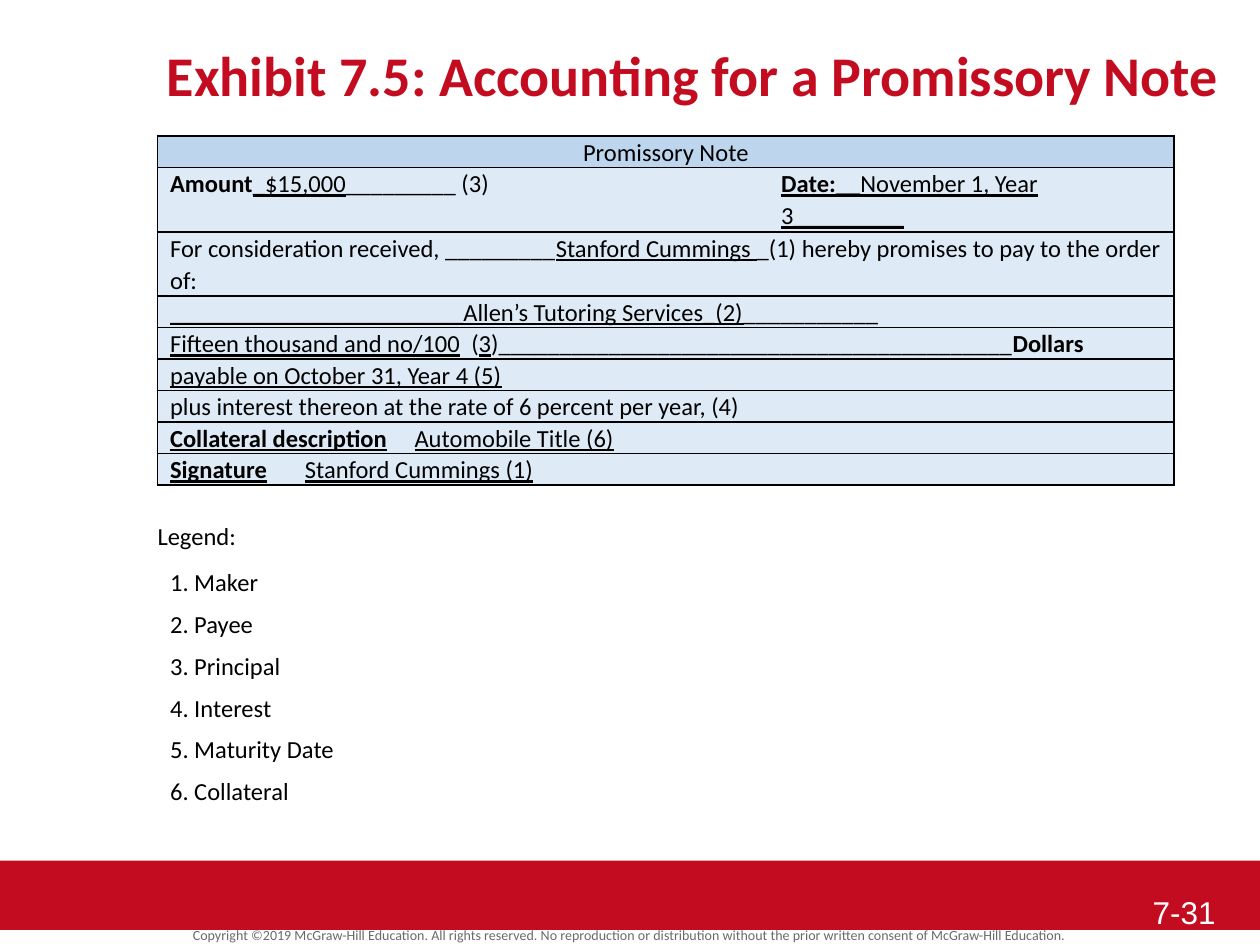
from lxml import etree
from pptx import Presentation
from pptx.dml.color import RGBColor
from pptx.enum import shapes, text
from pptx.oxml.ns import qn
from pptx.util import Inches, Pt

RED = RGBColor(0xC3, 0x0C, 0x20)
BLACK = RGBColor(0, 0, 0)
WHITE = RGBColor(0xFF, 0xFF, 0xFF)
GRAY = RGBColor(0x6A, 0x6A, 0x6A)
HEADER_BLUE = RGBColor(0xBD, 0xD6, 0xEE)
ROW_BLUE = RGBColor(0xDE, 0xEA, 0xF6)


def write(paragraph, wording, size=14, color=BLACK, name="Calibri", bold=False,
          underline=False, align=text.PP_ALIGN.LEFT, spacing=1.07):
    paragraph.alignment = align
    paragraph.line_spacing = spacing
    run = paragraph.add_run()
    run.text = wording
    font = run.font
    font.size, font.name, font.bold, font.underline = Pt(size), name, bold, underline
    font.color.rgb = color


def draw_borders(cell, edges):
    properties = cell._tc.get_or_add_tcPr()
    for edge in "LRTB":
        line = etree.SubElement(properties, qn(f"a:ln{edge}"), w=str(Pt(1)))
        if edge in edges:
            fill = etree.SubElement(line, qn("a:solidFill"))
            etree.SubElement(fill, qn("a:srgbClr"), val=str(BLACK))
        else:
            etree.SubElement(line, qn("a:noFill"))


presentation = Presentation()
presentation.slide_width, presentation.slide_height = Inches(10), Inches(7.5)
slide = presentation.slides.add_slide(presentation.slide_layouts[1])

# Footer band and copyright line
band = slide.shapes.add_shape(shapes.MSO_SHAPE.RECTANGLE, Inches(0), Inches(6.83),
                              Inches(10), Inches(0.55))
band.shadow.inherit = False
band.fill.solid()
band.fill.fore_color.rgb = RED
band.line.fill.background()

copyright_box = slide.shapes.add_textbox(Inches(0), Inches(7.34), Inches(10), Inches(0.19))
frame = copyright_box.text_frame
frame.word_wrap = True
frame.margin_top = frame.margin_bottom = 0
frame.vertical_anchor = text.MSO_ANCHOR.MIDDLE
write(frame.paragraphs[0],
      "Copyright ©2019 McGraw-Hill Education. All rights reserved. No reproduction or "
      "distribution without the prior written consent of McGraw-Hill Education.",
      size=8, color=GRAY, align=text.PP_ALIGN.CENTER, spacing=0.8)

# Title
title = slide.shapes.title
title.left, title.top, title.width, title.height = (
    Inches(1), Inches(0.25), Inches(9), Inches(0.67))
title.text_frame.auto_size = text.MSO_AUTO_SIZE.NONE
write(title.text_frame.paragraphs[0], "Exhibit 7.5: Accounting for a Promissory Note",
      size=32, color=RED, bold=True, align=text.PP_ALIGN.CENTER, spacing=1.0)

# Legend
legend = slide.placeholders[1]
legend.left, legend.top, legend.width, legend.height = (
    Inches(1.25), Inches(4.12), Inches(8), Inches(2.4))
frame = legend.text_frame
frame.auto_size = text.MSO_AUTO_SIZE.NONE
frame.margin_left = frame.margin_right = frame.margin_top = frame.margin_bottom = 0
entries = ["Legend:", "1. Maker", "2. Payee", "3. Principal", "4. Interest",
           "5. Maturity Date", "6. Collateral"]
for index, entry in enumerate(entries):
    paragraph = frame.add_paragraph() if index else frame.paragraphs[0]
    properties = paragraph._p.get_or_add_pPr()
    properties.set("marL", str(Inches(0.1) if index else 0))
    properties.set("indent", "0")
    etree.SubElement(properties, qn("a:buNone"))
    paragraph.space_before = Pt(0)
    paragraph.space_after = Pt(6 if index else 8)
    write(paragraph, entry)

# Promissory note: each row lists (first column, last column, tab stop, runs)
PLAIN, BOLD, LINED = {}, {"bold": True}, {"underline": True}
BOLD_LINED = {**BOLD, **LINED}
note_rows = [
    [(0, 3, None, [("Promissory Note", {"align": text.PP_ALIGN.CENTER})])],
    [(0, 0, None, [("Amount", BOLD), ("_$15,000", LINED), ("_________ (3)", PLAIN)]),
     (1, 1, None, []),
     (2, 3, None, [("Date:__", BOLD_LINED), ("November 1, Year 3_________", LINED)])],
    [(0, 3, None, [("For consideration received, _________", PLAIN),
                   ("Stanford Cummings ", LINED),
                   ("_(1) hereby promises to pay to the order of:", PLAIN)])],
    [(0, 3, None, [("_" * 24 + "Allen’s Tutoring Services_(2)", LINED),
                   ("_" * 11, PLAIN)])],
    [(0, 3, 2.39, [("Fifteen thousand and no/100\t", LINED), ("(", PLAIN), ("3", LINED),
                   (")" + "_" * 42, PLAIN), ("Dollars", BOLD)])],
    [(0, 2, None, [("payable on October 31, Year 4 (5)", LINED)]), (3, 3, None, [])],
    [(0, 2, None, [("plus interest thereon at the rate of 6 percent per year, (4)", PLAIN)]),
     (3, 3, None, [])],
    [(0, 2, 1.94, [("Collateral description", BOLD_LINED),
                   ("\tAutomobile Title (6)", LINED)]), (3, 3, None, [])],
    [(0, 2, 1.07, [("Signature", BOLD_LINED),
                   ("\tStanford Cummings (1)", LINED)]), (3, 3, None, [])],
]
table = slide.shapes.add_table(len(note_rows), 4, Inches(1.25), Inches(1.08),
                               Inches(8.03), Inches(2.77)).table
table.first_row = table.horz_banding = False
for column, width in zip(table.columns, [3.6, 1.25, 0.2, 2.98]):
    column.width = Inches(width)

for row, parts in enumerate(note_rows):
    table.rows[row].height = Inches(0.51 if row in (1, 2) else 0.25)
    for first, last, tab_stop, runs in parts:
        cell = table.cell(row, first)
        if last > first:
            cell.merge(table.cell(row, last))
        for column in range(first, last + 1):
            part = table.cell(row, column)
            edges = "TB" + ("L" if column == 0 else "") + ("R" if last == 3 and column in (first, 3) else "")
            draw_borders(part, edges)
            part.fill.solid()
            part.fill.fore_color.rgb = ROW_BLUE if row else HEADER_BLUE
            part.margin_top = part.margin_bottom = 0
        paragraph = cell.text_frame.paragraphs[0]
        if tab_stop:
            stops = etree.SubElement(paragraph._p.get_or_add_pPr(), qn("a:tabLst"))
            etree.SubElement(stops, qn("a:tab"), pos=str(Inches(tab_stop)), algn="l")
        if not runs:
            paragraph.font.size = Pt(14)
        for wording, style in runs:
            write(paragraph, wording, **style)

# Slide number
number_box = slide.shapes.add_textbox(Inches(9.05), Inches(7.04), Inches(0.92), Inches(0.42))
number_box.text_frame.word_wrap = True
write(number_box.text_frame.paragraphs[0], "7-31", size=18, color=WHITE, name="Arial",
      spacing=1.0)

presentation.save("out.pptx")
